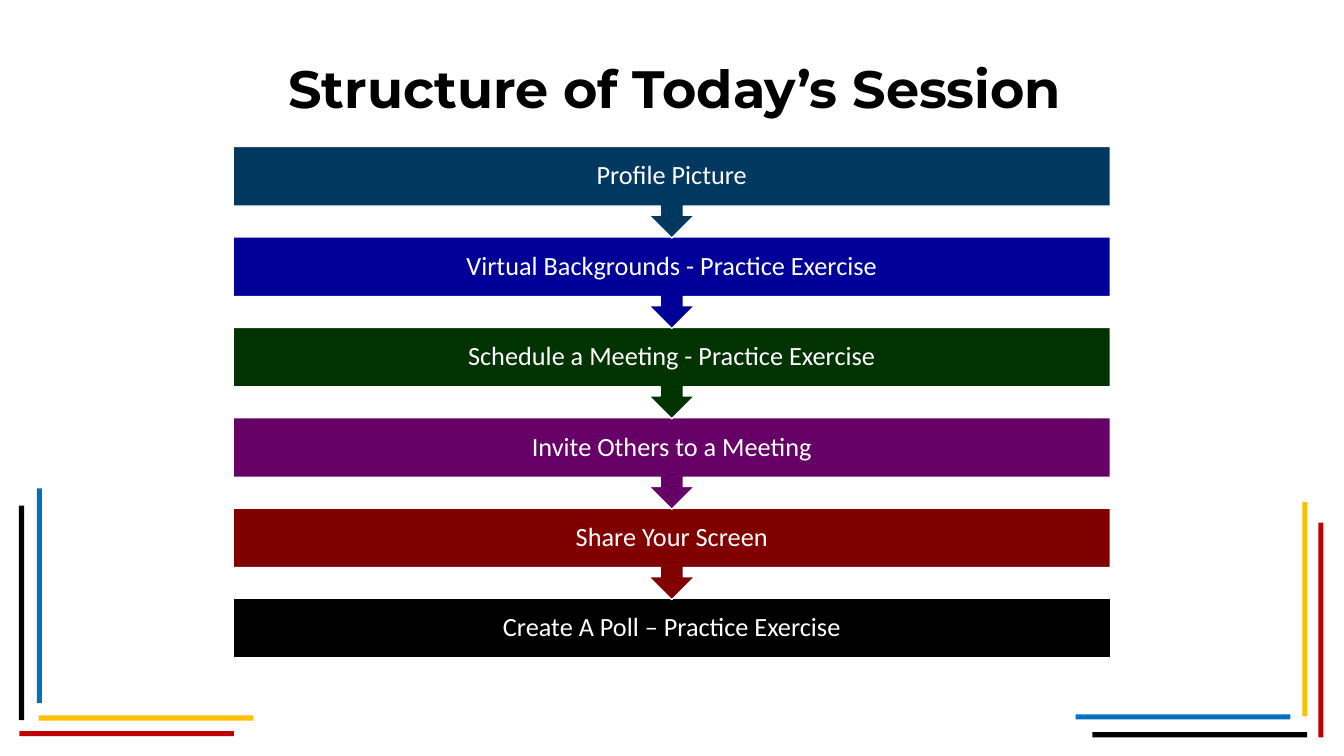
from pptx import Presentation
from pptx import util as u
from pptx.dml.color import RGBColor
from pptx.enum import shapes, text

COLORS = {
    "black": "000000", "white": "FFFFFF", "red": "C00000", "yellow": "FFC000",
    "blue": "0070C0", "teal": "003860", "navy": "000099", "green": "003300",
    "purple": "660066", "maroon": "800000",
}
TITLE = {"name": "Montserrat", "size": u.Pt(40), "bold": True}
STEP = {"name": "Calibri", "size": u.Pt(20), "bold": False}

STEPS = [
    ("Profile Picture", "teal"),
    ("Virtual Backgrounds - Practice Exercise", "navy"),
    ("Schedule a Meeting - Practice Exercise", "green"),
    ("Invite Others to a Meeting", "purple"),
    ("Share Your Screen", "maroon"),
    ("Create A Poll – Practice Exercise", "black"),
]
STEP_LEFT, STEP_TOP, STEP_WIDTH, STEP_PITCH = 6.27, 3.94, 23.57, 2.43
BOX_HEIGHT, CALLOUT_HEIGHT = 1.6, 2.46

BAR_LENGTH, BAR_THICKNESS = 5.77, 0.14
UPRIGHT_BARS = [("black", 0.51, 13.59), ("blue", 0.99, 13.13),
                ("red", 35.43, 14.05), ("yellow", 35, 13.49)]
LEVEL_BARS = [("red", 0.52, 19.65), ("yellow", 1.04, 19.23),
              ("black", 29.36, 19.68), ("blue", 28.91, 19.2)]


def rgb(name):
    return RGBColor.from_string(COLORS[name])


class Deck:
    """Holds the slide and the shared look of its elements."""

    def __init__(self, width, height):
        self.prs = Presentation()
        self.prs.slide_width, self.prs.slide_height = u.Cm(width), u.Cm(height)
        self.s = self.prs.slides.add_slide(self.prs.slide_layouts[6])

    def label(self, sp, words, style, color, margin, spacing=1.0):
        tf = sp.text_frame
        frame = {"word_wrap": True, "vertical_anchor": text.MSO_ANCHOR.MIDDLE}
        frame.update({f"margin_{side}": u.Cm(margin)
                      for side in ("left", "top", "right", "bottom")})
        for key, value in frame.items():
            setattr(tf, key, value)
        p = tf.paragraphs[0]
        p.alignment, p.line_spacing = text.PP_ALIGN.CENTER, spacing
        r = p.add_run()
        r.text = words
        for key, value in style.items():
            setattr(r.font, key, value)
        r.font.color.rgb = rgb(color)

    def shape(self, kind, color, *box):
        sp = self.s.shapes.add_shape(kind, *map(u.Cm, box))
        sp.shadow.inherit = False
        sp.fill.solid()
        sp.fill.fore_color.rgb = rgb(color)
        return sp

    def bar(self, color, *box):
        sp = self.shape(shapes.MSO_SHAPE.RECTANGLE, color, *box)
        sp.line.fill.background()

    def title(self, words, *box):
        sp = self.s.shapes.add_textbox(*map(u.Cm, box))
        self.label(sp, words, TITLE, "black", 0.25)

    def step(self, kind, words, color, *box):
        sp = self.shape(kind, color, *box)
        sp.line.color.rgb = rgb("white")
        sp.line.width = u.Pt(1)
        self.label(sp, words, STEP, "white", 0.4, 0.9)


def main():
    deck = Deck(36.12, 20.32)
    for color, left, top in UPRIGHT_BARS:
        deck.bar(color, left, top, BAR_THICKNESS, BAR_LENGTH)
    for color, left, top in LEVEL_BARS:
        deck.bar(color, left, top, BAR_LENGTH, BAR_THICKNESS)
    deck.title("Structure of Today’s Session", 1.7, 0.76, 32.87, 3.18)

    # Bottom step first, so that each arrow tip lies over the step below it.
    last = len(STEPS) - 1
    for i, (words, color) in reversed(list(enumerate(STEPS))):
        if i == last:
            kind, height = shapes.MSO_SHAPE.RECTANGLE, BOX_HEIGHT
        else:
            kind, height = shapes.MSO_SHAPE.DOWN_ARROW_CALLOUT, CALLOUT_HEIGHT
        deck.step(kind, words, color, STEP_LEFT, STEP_TOP + i * STEP_PITCH,
                  STEP_WIDTH, height)
    deck.prs.save("out.pptx")


if __name__ == "__main__":
    main()
